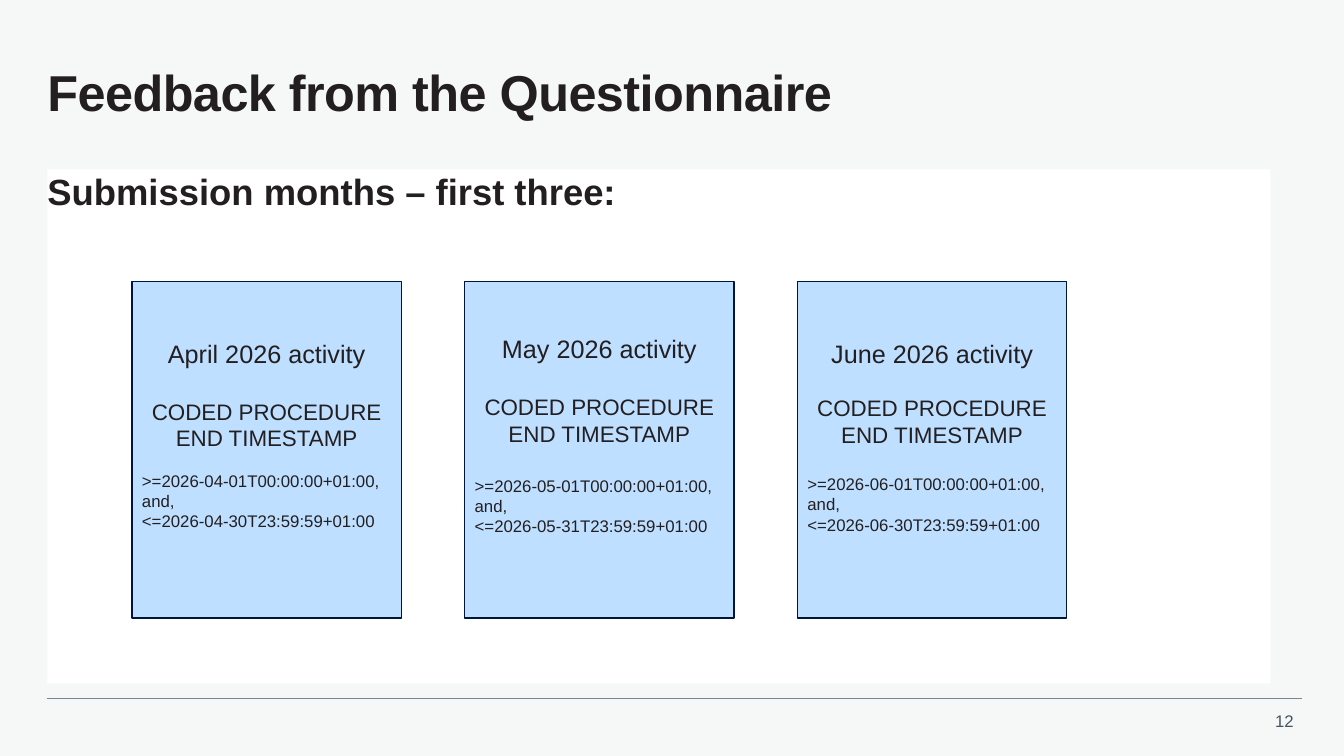
from lxml import etree
from pptx import Presentation
from pptx.dml.color import RGBColor
from pptx.enum import shapes, text
from pptx.oxml import ns
from pptx.util import Inches, Pt

PAPER = RGBColor(0xF6, 0xF8, 0xF8)
WHITE = RGBColor(0xFF, 0xFF, 0xFF)
INK = RGBColor(0x23, 0x1F, 0x20)
SLATE = RGBColor(0x42, 0x55, 0x63)
RULE = RGBColor(0x76, 0x86, 0x92)
SKY = RGBColor(0xBE, 0xDF, 0xFF)
NAVY = RGBColor(0x00, 0x15, 0x3B)

LEFT, CENTER, RIGHT = text.PP_ALIGN.LEFT, text.PP_ALIGN.CENTER, text.PP_ALIGN.RIGHT
TOP, MIDDLE = text.MSO_ANCHOR.TOP, text.MSO_ANCHOR.MIDDLE

CARD_LEFT, CARD_TOP, CARD_PITCH = 1.31, 2.79, 3.3
CARD_WIDTH, CARD_HEIGHT = 2.67, 3.34
MONTHS = [
    ("April", "04", 30, 20.7, 13.8, 0.34),
    ("May", "05", 31, 20.7, 20.7, 0.34),
    ("June", "06", 30, 18.4, 18.4, 0.31),
]


def add_text(para, words, size, color=INK, bold=False, align=LEFT, before=0):
    para.alignment = align
    para.space_before = Pt(before)
    span = para.add_run()
    span.text = words
    span.font.name = "Arial"
    span.font.size = Pt(size)
    span.font.bold = bold
    span.font.color.rgb = color
    return span


def set_frame(box, anchor, inset=None):
    frame = box.text_frame
    frame.word_wrap = True
    frame.vertical_anchor = anchor
    if inset is not None:
        frame.margin_left = frame.margin_right = Inches(inset)
        frame.margin_top = frame.margin_bottom = Inches(inset)
    return frame


def add_textbox(page, left, top, width, height, anchor, inset=None):
    box = page.shapes.add_textbox(Inches(left), Inches(top), Inches(width), Inches(height))
    return set_frame(box, anchor, inset)


def add_panel(page, left, top, width, height, fill, outline=None):
    box = page.shapes.add_shape(
        shapes.MSO_SHAPE.RECTANGLE, Inches(left), Inches(top), Inches(width), Inches(height))
    box.shadow.inherit = False
    box.fill.solid()
    box.fill.fore_color.rgb = fill
    if outline is None:
        box.line.fill.background()
    else:
        box.line.color.rgb = outline
        box.line.width = Pt(1)
    return box


def add_rule(page, left, right, top):
    rule = page.shapes.add_connector(
        shapes.MSO_CONNECTOR.STRAIGHT, Inches(left), Inches(top), Inches(right), Inches(top))
    rule.line.color.rgb = RULE
    rule.line.width = Pt(0.5)
    etree.SubElement(rule._element.spPr, ns.qn("a:effectLst"))


def add_month(page, left, month, number, last_day, field_gap, range_gap, bottom):
    card = add_panel(page, left, CARD_TOP, CARD_WIDTH, CARD_HEIGHT, SKY, NAVY)
    frame = set_frame(card, MIDDLE)
    frame.margin_bottom = Inches(bottom)
    add_text(frame.paragraphs[0], f"{month} 2026 activity", 18, align=CENTER)
    add_text(frame.add_paragraph(), "CODED PROCEDURE END TIMESTAMP", 16,
             align=CENTER, before=field_gap)
    add_text(frame.add_paragraph(), f">=2026-{number}-01T00:00:00+01:00, and,", 12,
             before=range_gap)
    add_text(frame.add_paragraph(), f"<=2026-{number}-{last_day}T23:59:59+01:00", 12)


def main():
    deck = Presentation()
    deck.slide_width, deck.slide_height = Inches(13.33), Inches(7.5)
    page = deck.slides.add_slide(deck.slide_layouts[6])
    page.background.fill.solid()
    page.background.fill.fore_color.rgb = PAPER

    number = add_textbox(page, 12.52, 7, 0.41, 0.3, TOP)
    add_text(number.paragraphs[0], "12", 12, SLATE, align=RIGHT)
    add_rule(page, 0.47, 12.91, 6.93)

    body = set_frame(add_panel(page, 0.47, 1.68, 12.13, 5.1, WHITE), TOP, 0)
    add_text(body.paragraphs[0], "Submission months – first three:", 26, bold=True)

    title = add_textbox(page, 0.47, 0.47, 12.47, 0.95, MIDDLE, 0)
    title.paragraphs[0].line_spacing = 0.9
    heading = add_text(title.paragraphs[0], "Feedback from the Questionnaire", 36, bold=True)
    heading.font._element.set("spc", "-40")

    for index, month in enumerate(MONTHS):
        add_month(page, CARD_LEFT + index * CARD_PITCH, *month)

    deck.save("out.pptx")


if __name__ == "__main__":
    main()
